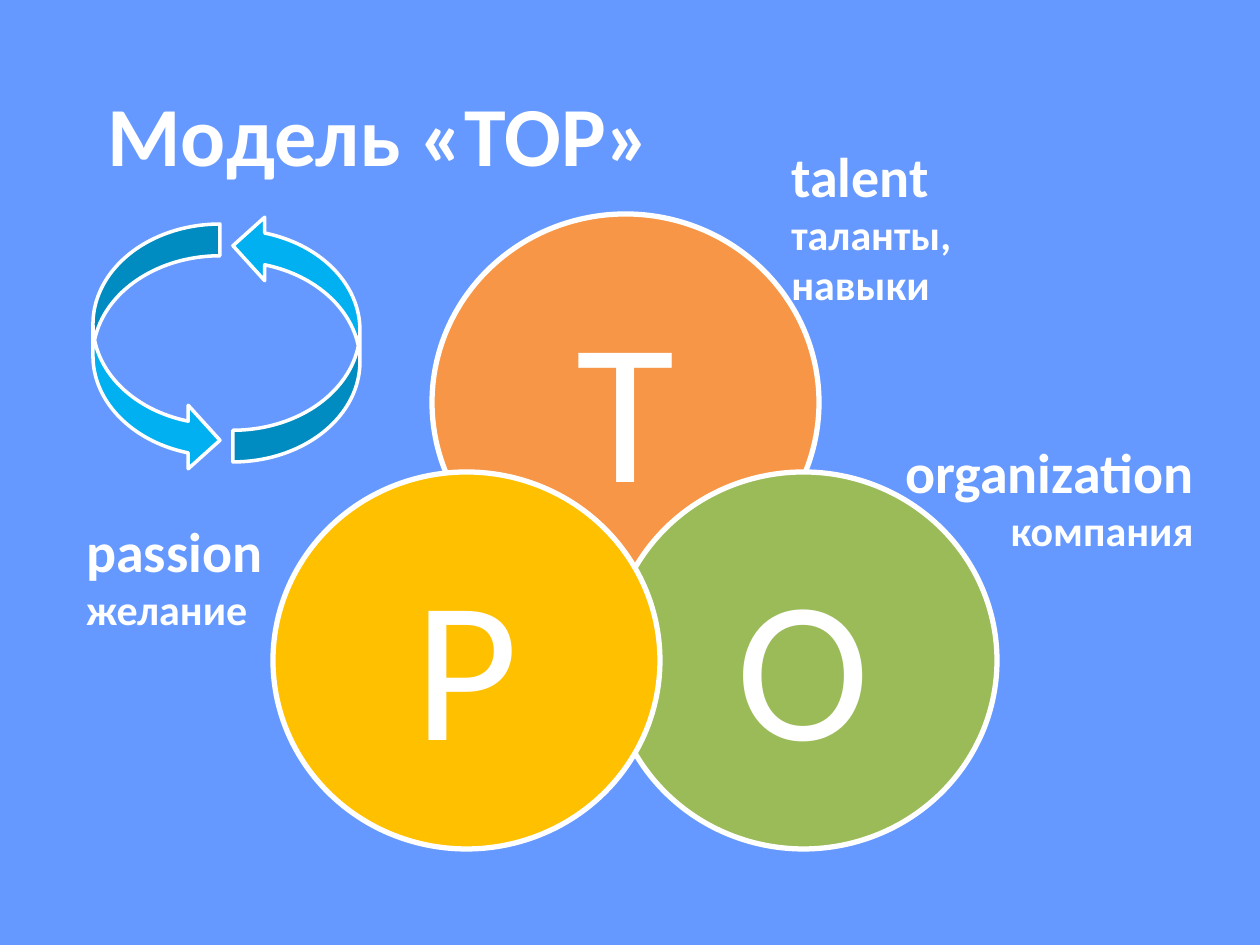
from dataclasses import dataclass

from pptx import Presentation
from pptx.dml.color import RGBColor
from pptx.enum.shapes import MSO_SHAPE
from pptx.enum.text import MSO_ANCHOR, MSO_AUTO_SIZE, PP_ALIGN
from pptx.util import Emu, Inches, Pt

PX = 914400 / 126


def px(n: int) -> Emu:
    return Emu(round(n * PX))


@dataclass(frozen=True)
class Theme:
    font: str = "Calibri"
    background: str = "6699FF"
    white: str = "FFFFFF"
    talent: str = "F79646"
    organization: str = "9BBB59"
    passion: str = "FFC000"
    arrow: str = "00B0F0"
    title: int = 48
    letter: int = 115
    term: int = 32
    meaning: int = 24


@dataclass(frozen=True)
class Box:
    x: int
    y: int
    w: int
    h: int

    def emu(self) -> tuple[Emu, ...]:
        return px(self.x), px(self.y), px(self.w), px(self.h)


@dataclass(frozen=True)
class Circle:
    letter: str
    x: int
    y: int
    color: str


@dataclass(frozen=True)
class Label:
    box: Box
    term: str
    meanings: tuple[str, ...]
    align: PP_ALIGN = PP_ALIGN.LEFT


@dataclass(frozen=True)
class Arrow:
    kind: MSO_SHAPE
    x: int
    y: int
    flipped: bool = False


THEME = Theme()
CIRCLE_W, CIRCLE_H = 387, 377
ARROW_W, ARROW_H = 127, 248
TITLE_BOX = Box(0, 76, 759, 115)

CIRCLES = (
    Circle("T", 432, 214, THEME.talent),
    Circle("O", 610, 472, THEME.organization),
    Circle("P", 273, 472, THEME.passion),
)
LABELS = (
    Label(Box(779, 135, 188, 183), "talent", ("таланты,", "навыки")),
    Label(Box(74, 510, 203, 131), "passion", ("желание",)),
    Label(Box(888, 431, 318, 131), "organization", ("компания",), PP_ALIGN.RIGHT),
)
ARROWS = (
    Arrow(MSO_SHAPE.CURVED_RIGHT_ARROW, 93, 224),
    Arrow(MSO_SHAPE.CURVED_LEFT_ARROW, 233, 214, flipped=True),
)


def rgb(color: str) -> RGBColor:
    return RGBColor.from_string(color)


def add_run(p, text: str, size: int, align: PP_ALIGN, bold: bool = True) -> None:
    p.alignment = align
    r = p.add_run()
    r.text = text
    r.font.name = THEME.font
    r.font.size = Pt(size)
    r.font.bold = bold
    r.font.color.rgb = rgb(THEME.white)


def add_outlined(s, kind: MSO_SHAPE, box: Box, color: str, width: int):
    sp = s.shapes.add_shape(kind, *box.emu())
    sp.shadow.inherit = False
    sp.fill.solid()
    sp.fill.fore_color.rgb = rgb(color)
    sp.line.color.rgb = rgb(THEME.white)
    sp.line.width = Pt(width)
    return sp


def add_circle(s, circle: Circle) -> None:
    box = Box(circle.x, circle.y, CIRCLE_W, CIRCLE_H)
    sp = add_outlined(s, MSO_SHAPE.OVAL, box, circle.color, 3)
    tf = sp.text_frame
    tf.vertical_anchor = MSO_ANCHOR.MIDDLE
    add_run(tf.paragraphs[0], circle.letter, THEME.letter, PP_ALIGN.CENTER, bold=False)


def add_label(s, label: Label) -> None:
    tf = s.shapes.add_textbox(*label.box.emu()).text_frame
    tf.word_wrap = False
    tf.auto_size = MSO_AUTO_SIZE.SHAPE_TO_FIT_TEXT
    add_run(tf.paragraphs[0], label.term, THEME.term, label.align)
    for meaning in label.meanings:
        add_run(tf.add_paragraph(), meaning, THEME.meaning, label.align)


def add_arrow(s, arrow: Arrow) -> None:
    box = Box(arrow.x, arrow.y, ARROW_W, ARROW_H)
    sp = add_outlined(s, arrow.kind, box, THEME.arrow, 2)
    if arrow.flipped:
        sp._element.spPr.xfrm.set("flipV", "1")


def add_title(s, text: str) -> None:
    sp = s.shapes.title
    sp.left, sp.top, sp.width, sp.height = TITLE_BOX.emu()
    tf = sp.text_frame
    tf.word_wrap = True
    tf.auto_size = MSO_AUTO_SIZE.NONE
    tf.vertical_anchor = MSO_ANCHOR.TOP
    add_run(tf.paragraphs[0], text, THEME.title, PP_ALIGN.CENTER)


def main() -> None:
    prs = Presentation()
    prs.slide_width, prs.slide_height = Inches(10), Inches(7.5)
    s = prs.slides.add_slide(prs.slide_layouts[5])
    s.background.fill.solid()
    s.background.fill.fore_color.rgb = rgb(THEME.background)
    for circle in CIRCLES:
        add_circle(s, circle)
    for label in LABELS:
        add_label(s, label)
    add_title(s, "Модель «TOP»")
    for arrow in ARROWS:
        add_arrow(s, arrow)
    prs.save("out.pptx")


if __name__ == "__main__":
    main()
